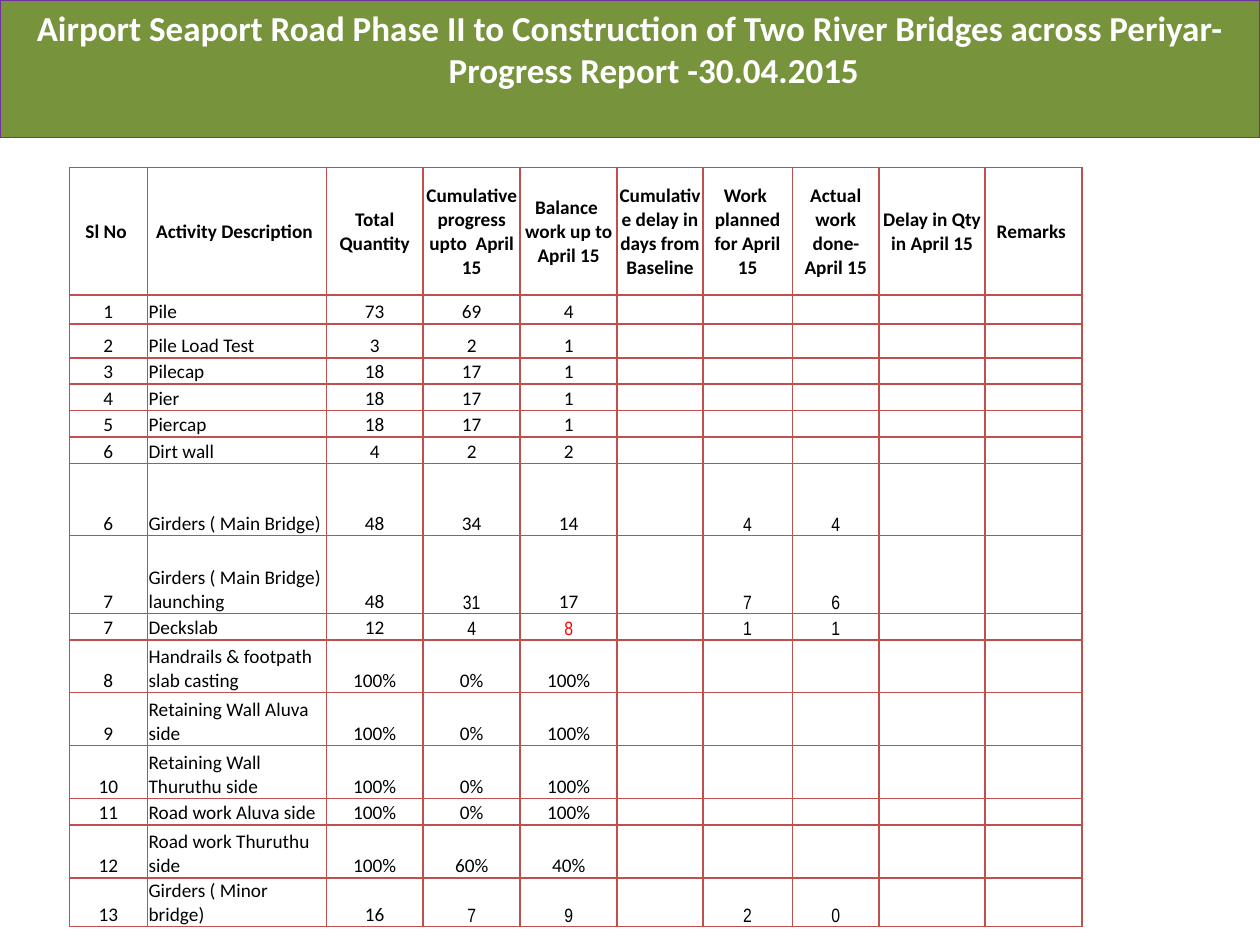
"""Build the bridge construction progress report slide."""
from dataclasses import dataclass

from lxml import etree
from pptx import Presentation
from pptx.dml.color import RGBColor
from pptx.enum.text import MSO_ANCHOR, PP_ALIGN
from pptx.oxml.ns import qn
from pptx.util import Inches, Pt

TOP, MIDDLE, BOTTOM = MSO_ANCHOR.TOP, MSO_ANCHOR.MIDDLE, MSO_ANCHOR.BOTTOM
LEFT, CENTER = PP_ALIGN.LEFT, PP_ALIGN.CENTER
COLORS = {"banner": "77933C", "outline": "7030A0", "white": "FFFFFF",
          "text": "000000", "alert": "FF0000", "border": "C0504D"}
BODY_FONT, NARROW_FONT = "Calibri", "Arial Narrow"
CELL_SIZE = 11
TITLE = ("Airport Seaport Road Phase II to Construction of Two River Bridges "
         "across Periyar- Progress Report -30.04.2015")
COL_WIDTHS = [0.62, 1.42, 0.77, 0.77, 0.77, 0.68, 0.71, 0.69, 0.84, 0.77]
DESCRIPTION_COL = 1


@dataclass(frozen=True)
class Row:
    """One table row, with the columns set in the narrow font or in red."""
    height: float
    values: tuple[str, ...]
    narrow: tuple[int, ...] = ()
    alert: tuple[int, ...] = ()
    header: bool = False


ROWS = [
    Row(1.01, ("Sl No ", "Activity Description ", "Total Quantity",
               "Cumulative progress upto  April 15", "Balance  work up to April 15",
               "Cumulative delay in days from Baseline", "Work  planned for April 15",
               "Actual work done-April 15", "Delay in Qty in April 15", "Remarks "),
        header=True),
    Row(0.23, ("1", "Pile", "73", "69", "4")),
    Row(0.27, ("2", "Pile Load Test", "3", "2", "1")),
    Row(0.21, ("3", "Pilecap", "18", "17", "1")),
    Row(0.21, ("4", "Pier", "18", "17", "1")),
    Row(0.21, ("5", "Piercap", "18", "17", "1")),
    Row(0.21, ("6", "Dirt wall", "4", "2", "2")),
    Row(0.57, ("6", "Girders ( Main Bridge)", "48", "34", "14", "", "4", "4"),
        narrow=(6, 7)),
    Row(0.62, ("7", "Girders ( Main Bridge) launching", "48", "31", "17", "", "7", "6"),
        narrow=(3, 6, 7)),
    Row(0.21, ("7", "Deckslab", "12", "4", "8", "", "1", "1"),
        narrow=(3, 4, 6, 7), alert=(4,)),
    Row(0.42, ("8", "Handrails & footpath slab casting", "100%", "0%", "100%")),
    Row(0.42, ("9", "Retaining Wall Aluva side", "100%", "0%", "100%")),
    Row(0.42, ("10", "Retaining Wall Thuruthu side", "100%", "0%", "100%")),
    Row(0.21, ("11", "Road work Aluva side", "100%", "0%", "100%")),
    Row(0.42, ("12", "Road work Thuruthu side", "100%", "60%", "40%")),
    Row(0.38, ("13", "Girders ( Minor bridge)", "16", "7", "9", "", "2", "0"),
        narrow=(3, 4, 6, 7)),
]


def rgb(name: str) -> RGBColor:
    """Look up a named colour."""
    return RGBColor.from_string(COLORS[name])


def write(tf, text: str, *, size: float = CELL_SIZE, font: str = BODY_FONT,
          color: str = "text", bold: bool = False, align=CENTER) -> None:
    """Write one formatted paragraph into a text frame."""
    p = tf.paragraphs[0]
    p.alignment = align
    if not text:
        p._p.get_or_add_endParaRPr().set("sz", str(int(size * 100)))
        return
    r = p.add_run()
    r.text = text
    r.font.size = Pt(size)
    r.font.name = font
    r.font.bold = bold
    r.font.color.rgb = rgb(color)


def set_borders(cell, color: str, width: float) -> None:
    """Draw the four borders of a cell."""
    tcPr = cell._tc.get_or_add_tcPr()
    for i, side in enumerate(("lnL", "lnR", "lnT", "lnB")):
        ln = etree.Element(qn(f"a:{side}"), w=str(Pt(width)))
        fill = etree.SubElement(ln, qn("a:solidFill"))
        etree.SubElement(fill, qn("a:srgbClr"), val=COLORS[color])
        tcPr.insert(i, ln)


def add_banner(s) -> None:
    """Turn the title placeholder into the full-width banner."""
    sp = s.shapes.title
    sp.left, sp.top, sp.width, sp.height = (Inches(v) for v in (0, 0, 10, 1.09))
    sp.fill.solid()
    sp.fill.fore_color.rgb = rgb("banner")
    sp.line.color.rgb = rgb("outline")
    sp.line.width = Pt(0.75)
    tf = sp.text_frame
    tf.word_wrap = True
    tf.vertical_anchor = TOP
    write(tf, TITLE, size=20, color="white", bold=True)
    pPr = tf.paragraphs[0]._p.get_or_add_pPr()
    pPr.set("marL", str(Inches(0.38)))
    pPr.set("indent", str(-Inches(0.38)))


def fill_cell(cell, row: Row, col: int) -> None:
    """Format one cell and write its value."""
    cell.margin_left = cell.margin_right = cell.margin_top = Inches(0.01)
    cell.margin_bottom = 0
    cell.vertical_anchor = MIDDLE if row.header else BOTTOM
    cell.fill.background()
    set_borders(cell, "border", 1)
    write(cell.text_frame, row.values[col] if col < len(row.values) else "",
          font=NARROW_FONT if col in row.narrow else BODY_FONT,
          color="alert" if col in row.alert else "text", bold=row.header,
          align=LEFT if col == DESCRIPTION_COL and not row.header else CENTER)


def add_progress_table(s) -> None:
    """Add the activity progress table."""
    table = s.shapes.add_table(
        len(ROWS), len(COL_WIDTHS), Inches(0.55), Inches(1.33),
        Inches(sum(COL_WIDTHS)), Inches(sum(row.height for row in ROWS))).table
    table.first_row = table.horz_banding = False
    for column, width in zip(table.columns, COL_WIDTHS):
        column.width = Inches(width)
    for i, row in enumerate(ROWS):
        table.rows[i].height = Inches(row.height)
        for col in range(len(COL_WIDTHS)):
            fill_cell(table.cell(i, col), row, col)


def main() -> None:
    """Build and save the presentation."""
    prs = Presentation()
    prs.slide_width, prs.slide_height = Inches(10), Inches(7.5)
    s = prs.slides.add_slide(prs.slide_layouts.get_by_name("Title Only"))
    add_banner(s)
    add_progress_table(s)
    prs.save("out.pptx")


if __name__ == "__main__":
    main()
